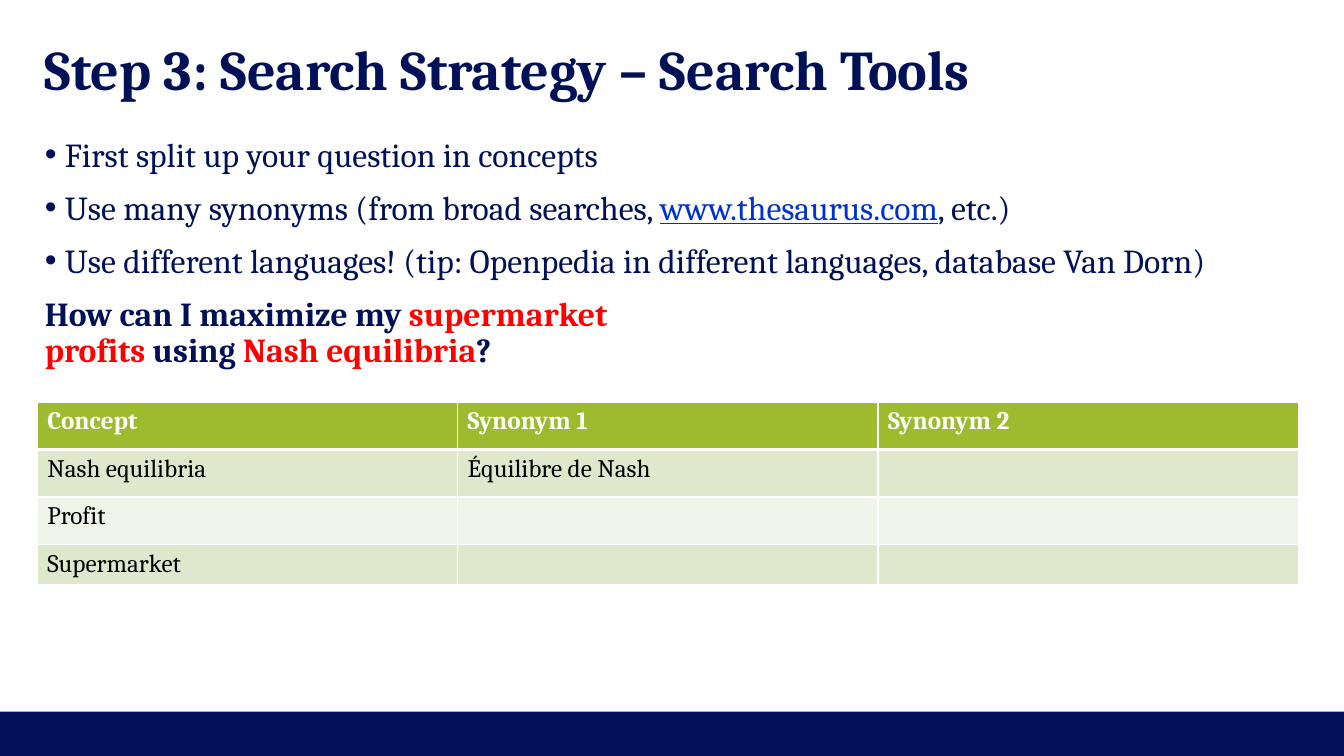
from lxml.etree import SubElement
from pptx import Presentation
from pptx.dml.color import RGBColor
from pptx.enum.shapes import MSO_SHAPE as Preset
from pptx.enum.text import MSO_ANCHOR as Anchor, PP_ALIGN as Align
from pptx.oxml.ns import qn
from pptx.util import Inches, Pt

WIDTH, HEIGHT = Inches(13.34), Inches(7.5)
COLUMNS, ROWS = 120, 100
COLOURS = {
    "navy": "001158", "link": "0033CC", "red": "FF0000", "white": "FFFFFF",
    "black": "000000", "green": "9EBA2E", "band": "DFE7CD", "pale": "F0F3E8",
}
FRAME = {"word_wrap": True, "margin_left": 0, "margin_right": 0,
         "margin_top": 0, "margin_bottom": 0}
BULLETS = [
    [("First split up your question in concepts", "navy")],
    [("Use many synonyms (from broad searches, ", "navy"),
     ("www.thesaurus.com", "link"), (", etc.)", "navy")],
    [("Use different languages! (tip: Openpedia in different languages, "
      "database Van Dorn)", "navy")],
]
QUESTION = [("How can I maximize my ", "navy"), ("supermarket\nprofits ", "red"),
            ("using ", "navy"), ("Nash equilibria", "red"), ("?", "navy")]
CONCEPTS = [
    ("Concept", "Synonym 1", "Synonym 2"),
    ("Nash equilibria", "Équilibre de Nash", ""),
    ("Profit", "", ""),
    ("Supermarket", "", ""),
]
ROW_HEIGHTS = [6.27, 6.27, 6.27, 5.2]


def colour(name):
    """Look up a named colour."""
    return RGBColor.from_string(COLOURS[name])


def across(columns):
    """Turn grid columns into a length."""
    return round(WIDTH * columns / COLUMNS)


def down(rows):
    """Turn grid rows into a length."""
    return round(HEIGHT * rows / ROWS)


def area(left, top, width, height):
    """Turn a grid area into a position and a size."""
    return across(left), down(top), across(width), down(height)


def apply(target, values):
    """Set several attributes on one object."""
    for name, value in values.items():
        setattr(target, name, value)


def add_span(para, text, size, ink, bold=False):
    """Add text in one format, breaking lines where it says so."""
    for index, line in enumerate(text.split("\n")):
        if index:
            para.add_line_break()
        span = para.add_run()
        span.text = line
        apply(span.font, {"name": "Cambria", "size": Pt(size), "bold": bold,
                          "underline": True if ink == "link" else None})
        span.font.color.rgb = colour(ink)


def add_bullet(para):
    """Give a paragraph a hanging navy bullet."""
    props = para._p.get_or_add_pPr()
    apply_indent = {"marL": Inches(0.2), "indent": -Inches(0.2)}
    for name, value in apply_indent.items():
        props.set(name, str(value))
    tint = SubElement(props, qn("a:buClr"))
    SubElement(tint, qn("a:srgbClr"), val=COLOURS["navy"])
    SubElement(props, qn("a:buFont"), typeface="Arial")
    SubElement(props, qn("a:buChar"), char="•")


def add_title(page, text):
    """Place and format the title."""
    title = page.shapes.title
    names = ("left", "top", "width", "height")
    apply(title, dict(zip(names, area(4, 5.87, 112, 6.27))))
    apply(title.text_frame, {**FRAME, "vertical_anchor": Anchor.MIDDLE})
    para = title.text_frame.paragraphs[0]
    para.alignment = Align.LEFT
    add_span(para, text, 40, "navy", True)


def add_body(page):
    """Write the bullets and the bold question."""
    frame = page.shapes.add_textbox(*area(4, 18.27, 112, 32)).text_frame
    apply(frame, FRAME)
    for index, spans in enumerate([*BULLETS, QUESTION]):
        para = frame.add_paragraph() if index else frame.paragraphs[0]
        apply(para, {"line_spacing": 0.9, "space_before": Pt(6 if index else 0),
                     "space_after": Pt(6)})
        if spans is not QUESTION:
            add_bullet(para)
        for text, ink in spans:
            add_span(para, text, 24, ink, spans is QUESTION)


def add_borders(cell, top, bottom):
    """Draw white cell borders, with top and bottom widths in points."""
    props = cell._tc.get_or_add_tcPr()
    for side, width in {"L": 1, "R": 1, "T": top, "B": bottom}.items():
        line = SubElement(props, qn(f"a:ln{side}"), w=str(Pt(width)))
        fill = SubElement(line, qn("a:solidFill"))
        SubElement(fill, qn("a:srgbClr"), val=COLOURS["white"])


def add_concept_table(page):
    """Add the banded table of concepts and synonyms."""
    place = area(3.33, 53.2, 112.6, sum(ROW_HEIGHTS))
    table = page.shapes.add_table(len(CONCEPTS), len(CONCEPTS[0]), *place).table
    for row, (texts, height) in enumerate(zip(CONCEPTS, ROW_HEIGHTS)):
        table.rows[row].height = down(height)
        header = row == 0
        fill = "green" if header else "band" if row % 2 else "pale"
        for column, text in enumerate(texts):
            cell = table.cell(row, column)
            add_borders(cell, 3 if row == 1 else 1, 3 if header else 1)
            cell.fill.solid()
            cell.fill.fore_color.rgb = colour(fill)
            if text:
                add_span(cell.text_frame.paragraphs[0], text, 18,
                         "white" if header else "black", header)


def add_footer_bar(page):
    """Add the navy bar along the bottom edge."""
    bar = page.shapes.add_shape(Preset.RECTANGLE, *area(0, 94.13, COLUMNS, 5.87))
    bar.shadow.inherit = False
    bar.fill.solid()
    bar.fill.fore_color.rgb = colour("navy")
    bar.line.fill.background()


def main():
    """Build and save the slide."""
    deck = Presentation()
    apply(deck, {"slide_width": WIDTH, "slide_height": HEIGHT})
    page = deck.slides.add_slide(deck.slide_layouts.get_by_name("Title Only"))
    add_footer_bar(page)
    add_title(page, "Step 3: Search Strategy – Search Tools")
    add_body(page)
    add_concept_table(page)
    deck.save("out.pptx")


if __name__ == "__main__":
    main()
